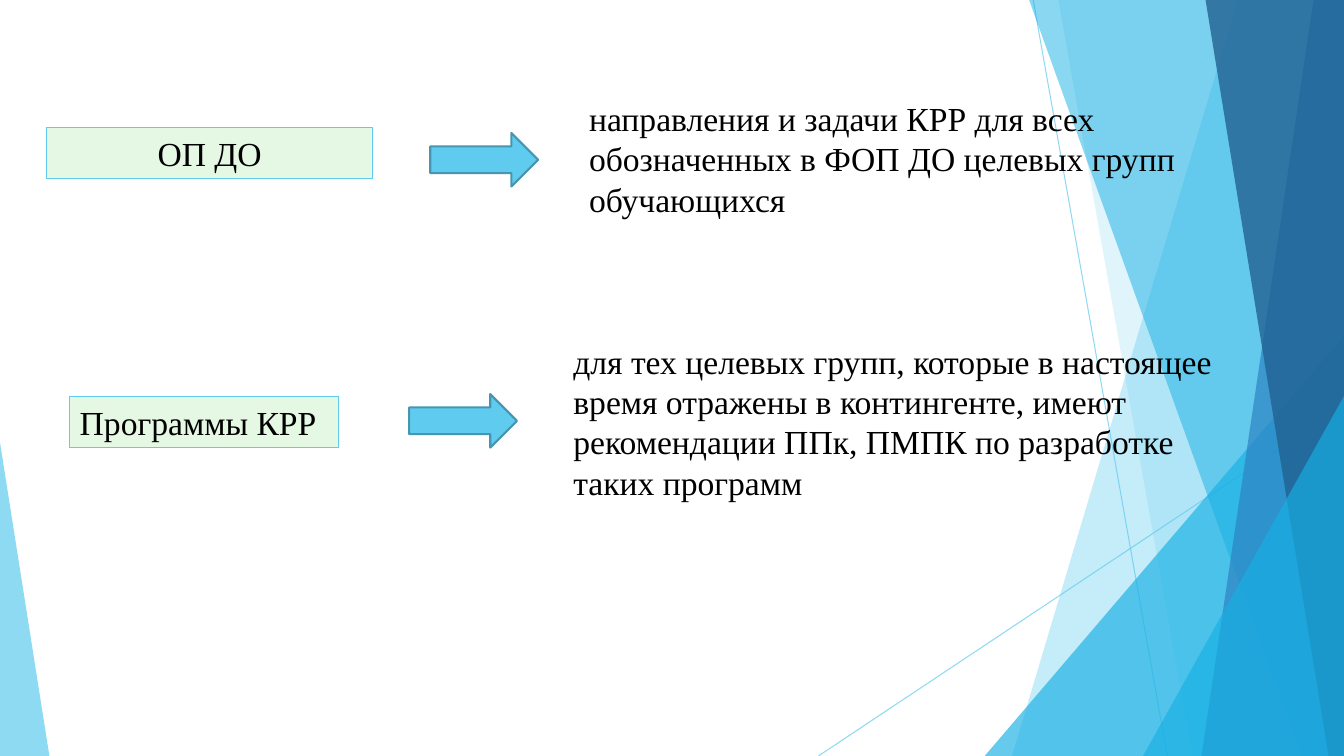
import pptx
import pptx.util
import pptx.dml.color
import pptx.enum.shapes
import pptx.enum.text
import pptx.oxml.ns
import lxml.etree

Pt = pptx.util.Pt
SHAPE = pptx.enum.shapes.MSO_SHAPE
ALIGN = pptx.enum.text.PP_ALIGN
ANCHOR = pptx.enum.text.MSO_ANCHOR
WIDTH, HEIGHT = 960, 540
COLORS = {
    "sky": "5FCBEF", "cyan": "17B0E4", "blue": "2E83C3", "navy": "226292",
    "mint": "E4F8E4", "arrow_edge": "4696B1", "text": "000000",
}


def paint(fill, color, opacity=100):
    """Make a fill solid, with opacity in percent."""
    fill.solid()
    fill.fore_color.rgb = pptx.dml.color.RGBColor.from_string(COLORS[color])
    if opacity < 100:
        for element in fill._xPr.iter(pptx.oxml.ns.qn("a:srgbClr")):
            alpha = lxml.etree.SubElement(element, pptx.oxml.ns.qn("a:alpha"))
            alpha.set("val", str(opacity * 1000))


def write(shape, text, align=ALIGN.LEFT, anchor=ANCHOR.TOP, wrap=True):
    frame = shape.text_frame
    frame.text = text
    frame.word_wrap = wrap
    frame.vertical_anchor = anchor
    paragraph = frame.paragraphs[0]
    paragraph.alignment = align
    font = paragraph.runs[0].font
    font.name = "Times New Roman"
    font.size = Pt(24)
    paint(font.fill, "text")


presentation = pptx.Presentation()
presentation.slide_width, presentation.slide_height = Pt(WIDTH), Pt(HEIGHT)
slide = presentation.slides.add_slide(presentation.slide_layouts[6])
shapes = slide.shapes

# Thin decorative lines
for ends in [(738, 0, 833.8, HEIGHT), (WIDTH, 290.2, 584.6, HEIGHT)]:
    line = shapes.add_connector(
        pptx.enum.shapes.MSO_CONNECTOR.STRAIGHT, *[Pt(value) for value in ends])
    line.line.width = Pt(0.75)
    paint(line.line.fill, "sky", 70)
    properties = line._element.spPr
    lxml.etree.SubElement(properties, pptx.oxml.ns.qn("a:effectLst"))

# Facets, back to front: a band is (top x, bottom x) up to the right edge,
# a triangle is (left, top, width, apex) down to the bottom edge
facets = [
    ((884.2, 722.9), "sky", 36),
    ((756, 851.8), "sky", 20),
    ((703.4, 239.8, 256.6, 1), "cyan", 66),
    ((735.1, 929.5), "cyan", 50),
    ((938.2, 858.2), "blue", 70),
    ((861.1, 949), "navy", 80),
    ((816.5, 283, 143.5, 1), "cyan", 66),
    ((0, 316.1, 35.3, 0), "sky", 70),
]
for geometry, color, opacity in facets:
    if len(geometry) == 2:
        top_x, bottom_x = geometry
        builder = shapes.build_freeform(Pt(top_x), Pt(0))
        builder.add_line_segments([
            (Pt(x), Pt(y)) for x, y in
            [(WIDTH, 0), (WIDTH, HEIGHT), (bottom_x, HEIGHT)]], close=True)
        facet = builder.convert_to_shape()
    else:
        left, top, width, apex = geometry
        facet = shapes.add_shape(SHAPE.ISOSCELES_TRIANGLE, Pt(left), Pt(top),
                                 Pt(width), Pt(HEIGHT - top))
        facet.adjustments[0] = apex
    facet.shadow.inherit = False
    facet.line.fill.background()
    paint(facet.fill, color, opacity)

# Labels
labels = [
    ("ОП ДО", 33.1, 91.4, 233.3, ALIGN.CENTER, ANCHOR.MIDDLE, True),
    ("Программы КРР", 49.9, 283.5, 191.8, ALIGN.LEFT, ANCHOR.TOP, False),
]
for text, left, top, width, align, anchor, wrap in labels:
    label = shapes.add_shape(SHAPE.RECTANGLE, Pt(left), Pt(top), Pt(width), Pt(36.3))
    label.shadow.inherit = False
    paint(label.fill, "mint")
    paint(label.line.fill, "sky")
    label.line.width = Pt(0.75)
    write(label, text, align, anchor, wrap)

# Descriptions
descriptions = [
    ("направления и задачи КРР для всех обозначенных в ФОП ДО целевых групп "
     "обучающихся", 413.7, 66.3, 465.1, 94.3),
    ("для тех целевых групп, которые в настоящее время отражены в контингенте, "
     "имеют рекомендации ППк, ПМПК по разработке таких программ",
     402.5, 239.8, 480.2, 123.8),
]
for text, *box in descriptions:
    write(shapes.add_textbox(*[Pt(value) for value in box]), text)

# Arrows from labels to descriptions
for left, top in [(307.4, 95), (292.3, 281.5)]:
    arrow = shapes.add_shape(SHAPE.RIGHT_ARROW, Pt(left), Pt(top), Pt(77), Pt(38.2))
    arrow.shadow.inherit = False
    paint(arrow.fill, "sky")
    paint(arrow.line.fill, "arrow_edge")
    arrow.line.width = Pt(1.5)

presentation.save("out.pptx")
